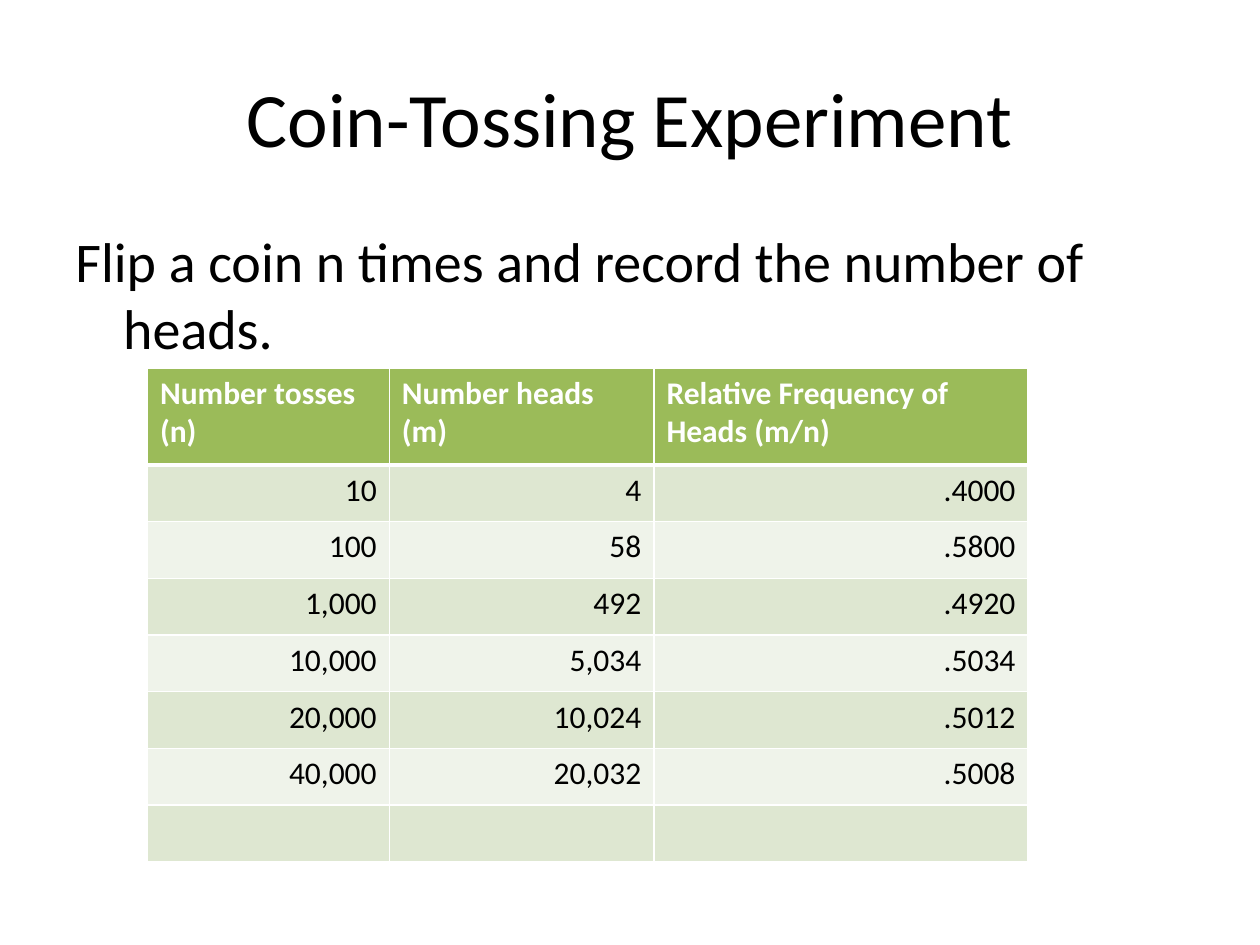
"""Build the coin-tossing experiment slide."""
from lxml import etree
from pptx import Presentation
from pptx.dml.color import RGBColor
from pptx.enum.text import MSO_ANCHOR, PP_ALIGN
from pptx.oxml.ns import qn
from pptx.util import Inches, Pt

LEFT, CENTER, RIGHT = PP_ALIGN.LEFT, PP_ALIGN.CENTER, PP_ALIGN.RIGHT
TOP, MIDDLE = MSO_ANCHOR.TOP, MSO_ANCHOR.MIDDLE
BLACK = RGBColor(0x00, 0x00, 0x00)
WHITE = RGBColor(0xFF, 0xFF, 0xFF)
GREEN = RGBColor(0x9B, 0xBB, 0x59)
BANDS = (RGBColor(0xDE, 0xE7, 0xD1), RGBColor(0xEF, 0xF3, 0xEA))
FONT = "Calibri"

HEADINGS = ("Number tosses (n)", "Number heads (m)", "Relative Frequency of Heads (m/n)")
TOSSES = (
    ("10", "4", ".4000"),
    ("100", "58", ".5800"),
    ("1,000", "492", ".4920"),
    ("10,000", "5,034", ".5034"),
    ("20,000", "10,024", ".5012"),
    ("40,000", "20,032", ".5008"),
    ("", "", ""),
)


def write(frame, text, size=18, color=BLACK, bold=False, align=LEFT, before=0, hanging=0):
    paragraph = frame.paragraphs[0]
    paragraph.alignment = align
    paragraph.space_before = Pt(before)
    paragraph.font.size = Pt(size)
    if hanging:
        properties = paragraph._p.get_or_add_pPr()
        properties.set("marL", str(Inches(hanging)))
        properties.set("indent", str(-Inches(hanging)))
    if text:
        run = paragraph.add_run()
        run.text = text
        run.font.name = FONT
        run.font.size = Pt(size)
        run.font.bold = bold
        run.font.color.rgb = color


class SlideBuilder:
    def __init__(self, slide, border=WHITE):
        self.slide = slide
        self.border = border

    def text(self, text, left, top, width, height, anchor=TOP, **style):
        frame = self.slide.shapes.add_textbox(
            Inches(left), Inches(top), Inches(width), Inches(height)).text_frame
        frame.word_wrap = True
        frame.vertical_anchor = anchor
        write(frame, text, **style)

    def cell(self, cell, text, fill, top_line=1, bottom_line=1, **style):
        properties = cell._tc.get_or_add_tcPr()
        for side, width in (("L", 1), ("R", 1), ("T", top_line), ("B", bottom_line)):
            line = etree.SubElement(properties, qn(f"a:ln{side}"), w=str(Pt(width)))
            solid = etree.SubElement(line, qn("a:solidFill"))
            etree.SubElement(solid, qn("a:srgbClr"), val=str(self.border))
        cell.fill.solid()
        cell.fill.fore_color.rgb = fill
        write(cell.text_frame, text, **style)

    def table(self, headings, records, left, top, widths, heading_height, row_height):
        height = heading_height + row_height * len(records)
        table = self.slide.shapes.add_table(
            len(records) + 1, len(headings), Inches(left), Inches(top),
            Inches(sum(widths)), Inches(height)).table
        for column, width in zip(table.columns, widths):
            column.width = Inches(width)
        for index, row in enumerate(table.rows):
            row.height = Inches(row_height if index else heading_height)
        for column, heading in enumerate(headings):
            self.cell(table.cell(0, column), heading, GREEN, bottom_line=3,
                      color=WHITE, bold=True)
        for index, record in enumerate(records):
            for column, value in enumerate(record):
                self.cell(table.cell(index + 1, column), value, BANDS[index % 2],
                          top_line=1 if index else 3, align=RIGHT)


def main():
    deck = Presentation()
    deck.slide_width, deck.slide_height = Inches(10), Inches(7.5)
    builder = SlideBuilder(deck.slides.add_slide(deck.slide_layouts[6]))
    builder.text("Coin-Tossing Experiment", 0.5, 0.3, 9, 1.25,
                 anchor=MIDDLE, size=44, align=CENTER)
    builder.text("Flip a coin n times and record the number of heads.", 0.5, 1.75, 9, 4.95,
                 size=32, before=6.4, hanging=0.38)
    builder.table(HEADINGS, TOSSES, 1.17, 2.92, (1.92, 2.1, 2.97), 0.77, 0.45)
    deck.save("out.pptx")


if __name__ == "__main__":
    main()
